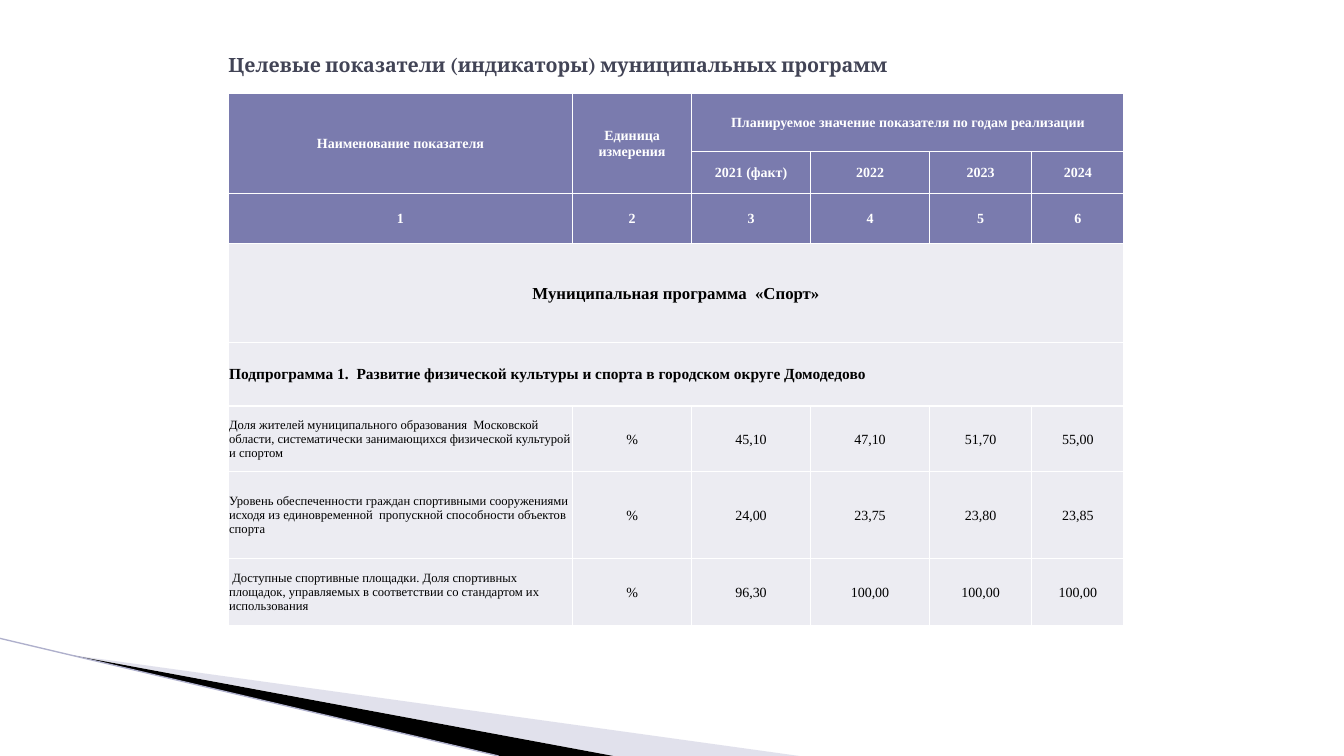
import pptx
import pptx.dml.color
import pptx.enum.shapes
import pptx.enum.text
import pptx.oxml.ns
import pptx.oxml.xmlchemy
import pptx.util

Pt = pptx.util.Pt
ALIGN = pptx.enum.text.PP_ALIGN
MIDDLE = pptx.enum.text.MSO_ANCHOR.MIDDLE

HEADER_FILL, BODY_FILL = "7A7BAE", "ECECF2"
WHITE, BLACK = "FFFFFF", "000000"
COLUMN_WIDTHS = [246, 85, 85, 85, 73, 66]
ROW_HEIGHTS = [42, 29.5, 36, 70.5, 45.5, 47, 62, 48]
MERGES = [(0, 0, 1, 0), (0, 1, 1, 1), (0, 2, 0, 5), (3, 0, 3, 5), (4, 0, 4, 5)]
HEADER_ROWS = [
    ["Наименование показателя", "Единица измерения",
     "Планируемое значение показателя по годам реализации", "", "", ""],
    ["", "", "2021 (факт)", "2022", "2023", "2024"],
    ["1", "2", "3", "4", "5", "6"],
]
PROGRAM = "Муниципальная программа  «Спорт»"
SUBPROGRAM = "Подпрограмма 1.  Развитие физической культуры и спорта в городском округе Домодедово"
INDICATORS = [
    ["Доля жителей муниципального образования  Московской области, "
     "систематически занимающихся физической культурой и спортом",
     "%", "45,10", "47,10", "51,70", "55,00"],
    ["Уровень обеспеченности граждан спортивными сооружениями исходя из "
     "единовременной  пропускной способности объектов спорта",
     "%", "24,00", "23,75", "23,80", "23,85"],
    [" Доступные спортивные площадки. Доля спортивных площадок, "
     "управляемых в соответствии со стандартом их использования",
     "%", "96,30", "100,00", "100,00", "100,00"],
]


def color(value):
    """Return the colour for a hex string."""
    return pptx.dml.color.RGBColor.from_string(value)


def new_element(tag):
    """Create an empty XML element for a prefixed tag."""
    return pptx.oxml.xmlchemy.OxmlElement(tag)


def add_run(paragraph, text, size, font, text_color, bold):
    """Add one formatted run to a paragraph."""
    run = paragraph.add_run()
    run.text = text
    run.font.size = Pt(size)
    run.font.name = font
    run.font.bold = bold
    run.font.color.rgb = color(text_color)


def add_wedge(slide, points, fill, opacity=100):
    """Draw a closed filled outline through the points."""
    builder = slide.shapes.build_freeform(*points[0], scale=Pt(1))
    builder.add_line_segments(points[1:], close=True)
    shape = builder.convert_to_shape()
    shape.shadow.inherit = False
    shape.line.fill.background()
    shape.fill.solid()
    shape.fill.fore_color.rgb = color(fill)
    if opacity < 100:
        fill_color = shape._element.spPr.find(".//" + pptx.oxml.ns.qn("a:srgbClr"))
        alpha = new_element("a:alpha")
        alpha.set("val", str(opacity * 1000))
        fill_color.append(alpha)


def add_line(slide, start, end, line_color, width):
    """Draw a straight line without a shadow."""
    connector = slide.shapes.add_connector(
        pptx.enum.shapes.MSO_CONNECTOR.STRAIGHT, *map(Pt, start + end))
    connector.line.color.rgb = color(line_color)
    connector.line.width = Pt(width)
    connector._element.spPr.append(new_element("a:effectLst"))


def set_title(slide, text):
    """Place and format the slide title."""
    title = slide.shapes.title
    title.left, title.top, title.width, title.height = map(Pt, (156, 21.5, 648, 50))
    frame = title.text_frame
    frame.word_wrap = True
    frame.auto_size = pptx.enum.text.MSO_AUTO_SIZE.NONE
    frame.vertical_anchor = MIDDLE
    paragraph = frame.paragraphs[0]
    paragraph.alignment = ALIGN.LEFT
    add_run(paragraph, text, 14, "Cambria", "424456", True)


def add_borders(cell):
    """Give a cell thin white borders on all sides."""
    properties = cell._tc.get_or_add_tcPr()
    for index, side in enumerate(("a:lnL", "a:lnR", "a:lnT", "a:lnB")):
        border = new_element(side)
        border.set("w", str(int(Pt(1))))
        fill = new_element("a:solidFill")
        border_color = new_element("a:srgbClr")
        border_color.set("val", WHITE)
        fill.append(border_color)
        border.append(fill)
        properties.insert(index, border)


def fill_cell(cell, text, fill, size, text_color, bold, alignment):
    """Format one table cell and write its text."""
    cell.fill.solid()
    cell.fill.fore_color.rgb = color(fill)
    add_borders(cell)
    cell.vertical_anchor = MIDDLE
    cell.margin_left = cell.margin_right = cell.margin_top = Pt(0.7)
    cell.margin_bottom = Pt(0)
    paragraph = cell.text_frame.paragraphs[0]
    paragraph.alignment = alignment
    if text:
        add_run(paragraph, text, size, "Times New Roman", text_color, bold)


def add_indicator_table(slide):
    """Build the table of programme indicators."""
    table = slide.shapes.add_table(
        len(ROW_HEIGHTS), len(COLUMN_WIDTHS), Pt(163), Pt(66.5),
        Pt(sum(COLUMN_WIDTHS)), Pt(sum(ROW_HEIGHTS))).table
    for column, width in zip(table.columns, COLUMN_WIDTHS):
        column.width = Pt(width)
    for row, height in zip(table.rows, ROW_HEIGHTS):
        row.height = Pt(height)

    blanks = [""] * (len(COLUMN_WIDTHS) - 1)
    header = (HEADER_FILL, 10, WHITE, True, ALIGN.CENTER)
    program = (BODY_FILL, 12, BLACK, True, ALIGN.CENTER)
    subprogram = (BODY_FILL, 11, BLACK, True, ALIGN.LEFT)
    name = (BODY_FILL, 9, BLACK, False, ALIGN.LEFT)
    value = (BODY_FILL, 10, BLACK, False, ALIGN.CENTER)
    rows = [(texts, header, header) for texts in HEADER_ROWS]
    rows.append(([PROGRAM] + blanks, program, program))
    rows.append(([SUBPROGRAM] + blanks, subprogram, subprogram))
    rows += [(texts, name, value) for texts in INDICATORS]
    for row_index, (texts, first_style, other_style) in enumerate(rows):
        for column_index, text in enumerate(texts):
            style = other_style if column_index else first_style
            fill_cell(table.cell(row_index, column_index), text, *style)
    for top, left, bottom, right in MERGES:
        table.cell(top, left).merge(table.cell(bottom, right))


def main():
    """Build and save the presentation."""
    presentation = pptx.Presentation()
    presentation.slide_width, presentation.slide_height = Pt(960), Pt(540)
    slide = presentation.slides.add_slide(presentation.slide_layouts[5])
    add_wedge(slide, [(52.5, 468), (571, 540), (438, 540)], "B6B6D1", 40)
    add_wedge(slide, [(51, 467.5), (438, 540), (357, 540)], BLACK)
    add_line(slide, (0, 456), (356, 540), "AFB0CC", 0.95)
    set_title(slide, "Целевые показатели (индикаторы) муниципальных программ")
    add_indicator_table(slide)
    presentation.save("out.pptx")


if __name__ == "__main__":
    main()
